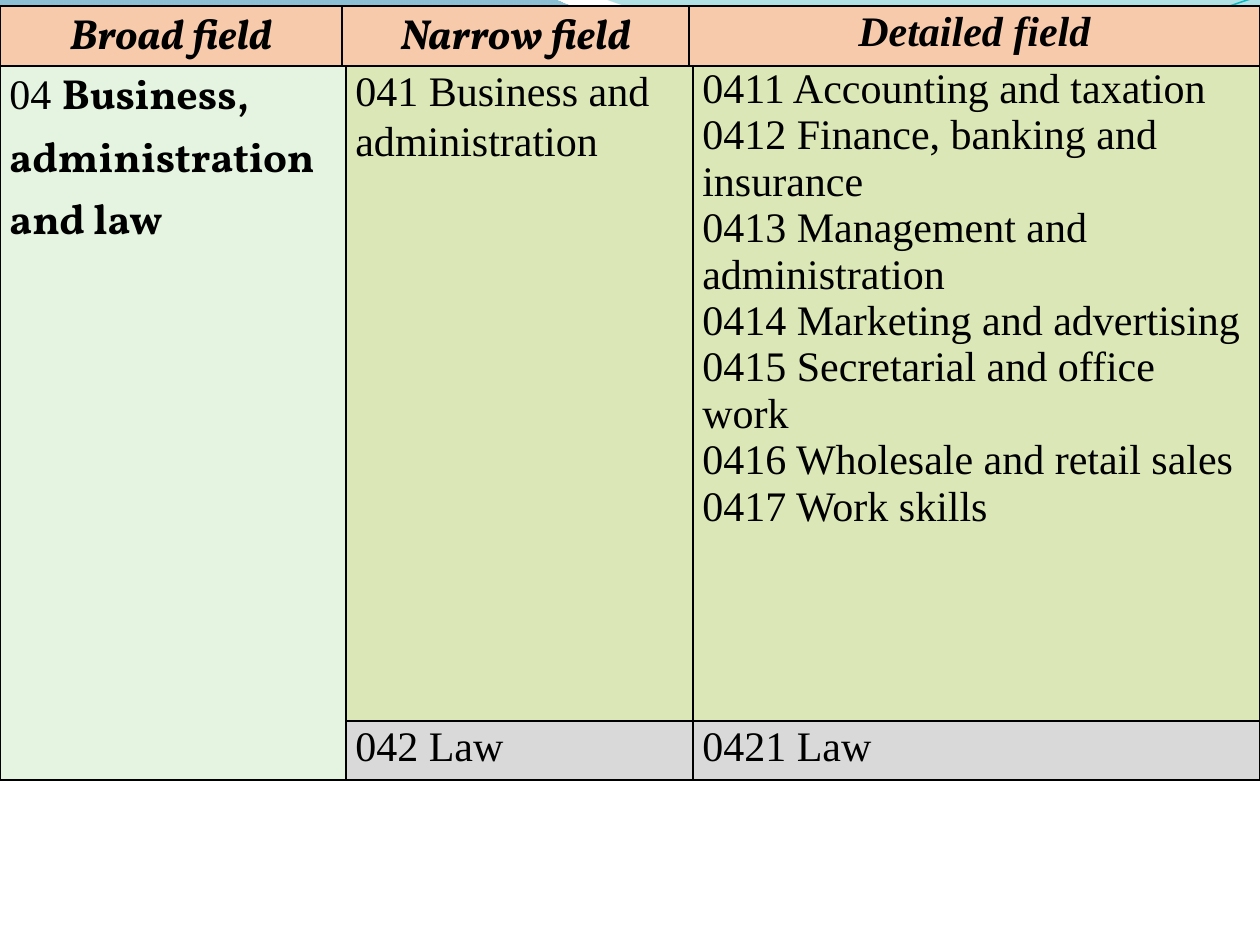
"""Build a slide of fields of study in business, administration and law."""
from lxml import etree
from pptx import Presentation
from pptx.dml.color import RGBColor
from pptx.enum.text import PP_ALIGN
from pptx.oxml.ns import qn
from pptx.util import Emu, Pt

PX = 914400 // 126
CENTER, LEFT = PP_ALIGN.CENTER, PP_ALIGN.LEFT
SLIDE_SIZE = (1260, 945)
CELL_MARGIN = Pt(5.4)
BLANK_LAYOUT = 6
SIDES = {"left": "lnL", "right": "lnR", "top": "lnT", "bottom": "lnB"}

THEME = {
    "serif": "Times New Roman", "display": "Vollkorn", "size": 24,
    "text": "000000", "border": "000000", "border_width": 1,
    "header": "F7CAAC", "broad": "E5F4E0", "business": "DBE7B6", "law": "D9D9D9",
}
PLAIN = {"name": THEME["serif"], "bold": False, "italic": False}
STRONG = {"name": THEME["display"], "bold": True, "italic": False}
HEADING = {"name": THEME["display"], "bold": True, "italic": True}
SERIF_HEADING = {**HEADING, "name": THEME["serif"]}
SPACED = {"line_spacing": 1.07, "space_after": Pt(8), "alignment": LEFT}
CENTERED = {**SPACED, "alignment": CENTER}
TIGHT = {"alignment": LEFT}

WAVES = [
    {"start": (0, 0), "closed": True,
     "segments": [(554, -1), (600, 21, 837, 79, 955, 79), (1075, 79, 1207, 33, 1260, 11),
                  (1261, 45), (1239, 55, 1096, 96, 940, 94), (784, 94, 481, 35, 324, 43),
                  (163, 45, 58, 105, -1, 142)],
     "stops": [(0, "0074A1", 45), (1, "00C6CF", 55)]},
    {"start": (604, -1), "closed": True,
     "segments": [(641, 14, 859, 78, 969, 82), (1079, 87, 1211, 40, 1260, 26), (1260, 0)],
     "stops": [(0, "00A1A9", 30), (0.8, "008BBF", 45)]},
    {"start": (0, 140), "closed": False,
     "segments": [(60, 117, 199, 72, 349, 66), (498, 59, 747, 112, 898, 101),
                  (1050, 89, 1182, 19, 1257, -3)],
     "line": ("0AB8BF", 0.85)},
    {"start": (0, 131), "closed": False,
     "segments": [(59, 121, 207, 77, 357, 71), (508, 64, 752, 106, 903, 94),
                  (1053, 84, 1186, 26, 1260, 8)],
     "line": ("0F6FC6", 0.75)},
]

DETAILED_BUSINESS = [
    "0411 Accounting and taxation", "0412 Finance, banking and insurance",
    "0413 Management and administration", "0414 Marketing and advertising",
    "0415 Secretarial and office work", "0416 Wholesale and retail sales",
    "0417 Work skills",
]
TABLES = [
    {"top": 6, "columns": [342, 347, 571], "rows": [59], "open_sides": {}, "cells": [[
        ("header", CENTERED, [[("Broad field", HEADING)]]),
        ("header", CENTERED, [[("Narrow field", HEADING)]]),
        ("header", CENTERED, [[("Detailed field", SERIF_HEADING)]]),
    ]]},
    {"top": 66, "columns": [346, 347, 567], "rows": [655, 59],
     "open_sides": {(0, 0): "bottom", (1, 0): "top"}, "cells": [[
        ("broad", SPACED, [[("04 ", PLAIN), ("Business, administration and law", STRONG)]]),
        ("business", SPACED, [[("041 Business and administration", PLAIN)]]),
        ("business", TIGHT, [[(field, PLAIN)] for field in DETAILED_BUSINESS]),
     ], [
        ("broad", SPACED, []),
        ("law", SPACED, [[("042 Law", PLAIN)]]),
        ("law", SPACED, [[("0421 Law", PLAIN)]]),
     ]]},
]


def color(value):
    return RGBColor.from_string(value)


def apply(target, values):
    for name, value in values.items():
        setattr(target, name, value)


def curve_segments(shape, segments):
    lines = iter(shape.element.spPr.findall(".//" + qn("a:lnTo")))
    for segment in segments:
        steps = [next(lines) for _ in range(len(segment) // 2)]
        if len(steps) == 3:
            curve = etree.Element(qn("a:cubicBezTo"))
            steps[0].addprevious(curve)
            for step in steps:
                curve.append(step[0])
                step.getparent().remove(step)


def add_wave(slide, wave):
    x, y = wave["start"]
    points = [(segment[i] * PX, segment[i + 1] * PX)
              for segment in wave["segments"] for i in range(0, len(segment), 2)]
    builder = slide.shapes.build_freeform(x * PX, y * PX)
    builder.add_line_segments(points, close=wave["closed"])
    shape = builder.convert_to_shape()
    curve_segments(shape, wave["segments"])
    shape.shadow.inherit = False
    if "line" in wave:
        line_color, width = wave["line"]
        shape.fill.background()
        shape.line.color.rgb = color(line_color)
        shape.line.width = Pt(width)
        return
    shape.line.fill.background()
    shape.fill.gradient()
    shape.fill.gradient_angle = 270
    for stop, (position, value, _) in zip(shape.fill.gradient_stops, wave["stops"]):
        stop.position = position
        stop.color.rgb = color(value)
    stop_colors = shape.element.spPr.findall(".//" + qn("a:gs") + "/" + qn("a:srgbClr"))
    for stop_color, (_, _, opacity) in zip(stop_colors, wave["stops"]):
        etree.SubElement(stop_color, qn("a:alpha"), val=str(opacity * 1000))


def add_borders(cell, open_side):
    properties = cell._tc.get_or_add_tcPr()
    for index, (side, tag) in enumerate(SIDES.items()):
        border = etree.Element(qn("a:" + tag), w=str(Pt(THEME["border_width"])))
        if side == open_side:
            etree.SubElement(border, qn("a:noFill"))
        else:
            fill = etree.SubElement(border, qn("a:solidFill"))
            etree.SubElement(fill, qn("a:srgbClr"), val=THEME["border"])
        properties.insert(index, border)


def fill_cell(cell, open_side, fill, paragraph_format, paragraphs):
    apply(cell, {"margin_left": CELL_MARGIN, "margin_right": CELL_MARGIN,
                 "margin_top": 0, "margin_bottom": 0})
    cell.fill.solid()
    cell.fill.fore_color.rgb = color(THEME[fill])
    add_borders(cell, open_side)
    frame = cell.text_frame
    for index, runs in enumerate(paragraphs):
        paragraph = frame.add_paragraph() if index else frame.paragraphs[0]
        apply(paragraph, paragraph_format)
        for text, font_format in runs:
            run = paragraph.add_run()
            run.text = text
            apply(run.font, {**font_format, "size": Pt(THEME["size"])})
            run.font.color.rgb = color(THEME["text"])


def add_field_table(slide, content):
    columns, rows = content["columns"], content["rows"]
    table = slide.shapes.add_table(len(rows), len(columns), 0, content["top"] * PX,
                                   sum(columns) * PX, sum(rows) * PX).table
    apply(table, {"first_row": False, "horz_banding": False})
    for column, width in zip(table.columns, columns):
        column.width = Emu(width * PX)
    for row, height in zip(table.rows, rows):
        row.height = Emu(height * PX)
    for row_index, row_cells in enumerate(content["cells"]):
        for column_index, cell_content in enumerate(row_cells):
            open_side = content["open_sides"].get((row_index, column_index))
            fill_cell(table.cell(row_index, column_index), open_side, *cell_content)


def main():
    presentation = Presentation()
    presentation.slide_width, presentation.slide_height = (Emu(n * PX) for n in SLIDE_SIZE)
    slide = presentation.slides.add_slide(presentation.slide_layouts[BLANK_LAYOUT])
    for wave in WAVES:
        add_wave(slide, wave)
    for content in TABLES:
        add_field_table(slide, content)
    presentation.save("out.pptx")


if __name__ == "__main__":
    main()
